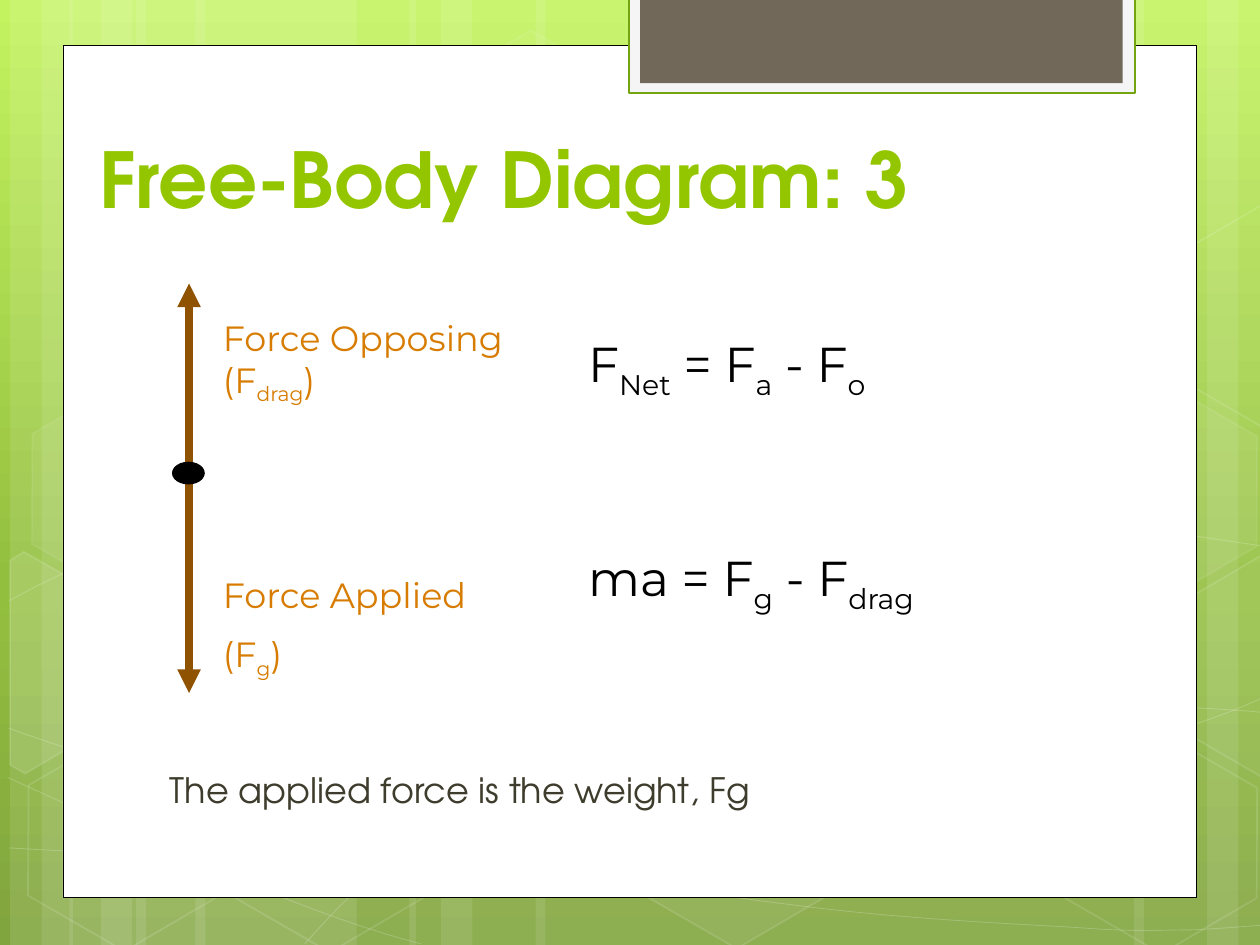
from lxml.etree import SubElement
from pptx import Presentation
from pptx.dml.color import RGBColor
from pptx.enum.shapes import MSO_CONNECTOR, MSO_SHAPE
from pptx.enum.text import MSO_ANCHOR, PP_ALIGN
from pptx.oxml.ns import qn
from pptx.util import Inches, Pt

# The grid has 10 columns and 7.5 rows of one inch each
COLUMNS, ROWS = 10, 7.5
COLORS = {
    "white": "FFFFFF", "black": "000000", "title": "94C600", "body": "3E3D2D",
    "arrow": "8F5201", "label": "D77C01", "frame": "F5F5F5", "tab": "71685A",
    "border": "74A510", "top": "C3F35F", "middle": "93BF3F", "bottom": "81A53E",
}
HEADING_FONT, LABEL_FONT = "TeX Gyre Adventor", "Montserrat"

# Background stripes: left column, width
STRIPES = [
    (1.08, 1.75), (0.08, 0.5), (0.33, 0.83), (1.55, 1.75), (0.55, 0.5), (0.8, 0.83),
    (7.33, 1.75), (9.58, 0.5), (9, 0.83), (4.25, 3.08), (3.25, 0.5), (3.5, 0.83),
]
# Background waves: a start point, then three points for each Bezier segment
WAVES = [
    [(0.07, 6.73), (0.61, 6.76), (1.15, 6.79), (1.9, 6.78), (2.65, 6.77), (3.58, 6.75),
     (4.58, 6.65), (5.58, 6.55), (7, 6.36), (7.92, 6.17), (8.83, 5.98), (9.77, 5.68),
     (10.07, 5.51)],
    [(0.07, 4.77), (0.36, 4.61), (0.65, 4.46), (1.21, 4.31), (1.78, 4.16), (2.59, 3.94),
     (3.47, 3.87), (4.36, 3.8), (5.44, 3.79), (6.54, 3.87), (7.64, 3.95), (9.47, 4.26),
     (10.07, 4.34)],
    [(0.06, 6.17), (1.27, 6.72), (2.47, 7.27), (3.34, 7.49)],
    [(0.07, 5.78), (0.38, 5.89), (0.7, 6), (1.28, 6.16), (1.86, 6.31), (2.73, 6.56),
     (3.57, 6.73), (4.4, 6.9), (5.45, 7.08), (6.28, 7.18), (7.11, 7.29), (8, 7.33),
     (8.53, 7.36), (9.05, 7.4), (9.19, 7.38), (9.45, 7.38), (9.71, 7.37), (9.89, 7.35),
     (10.07, 7.34)],
    [(2.42, 7.49), (2.6, 7.29), (2.78, 7.09), (3.02, 6.91), (3.26, 6.73), (3.6, 6.53),
     (3.88, 6.39), (4.16, 6.25), (4.33, 6.19), (4.7, 6.09), (5.06, 5.99), (5.73, 5.85),
     (6.08, 5.78), (6.44, 5.71), (6.49, 5.71), (6.8, 5.69), (7.11, 5.66), (7.6, 5.63),
     (7.94, 5.62), (8.29, 5.61), (8.86, 5.62), (8.86, 5.62), (9.08, 5.62), (9.31, 5.62),
     (9.53, 5.62), (9.71, 5.63), (9.88, 5.64), (9.97, 5.65), (10.06, 5.66), (10.03, 5.65),
     (10.06, 5.66)],
]
# Hexagons: left column, top row, fill opacity (0 for none), line opacity
HEXAGONS = [
    (3.34, 0.36, 4, 8), (4.97, 5.89, 6, 12), (0.11, 5.91, 0, 12), (0.14, 3.12, 7, 8),
    (1.74, 5.92, 0, 12), (7.53, 4.53, 10, 12), (8.34, 5.93, 0, 12), (8.34, 3.14, 7, 8),
]
# Hexagons cut off by the slide edge: corner points, fill opacity
CUT_HEXAGONS = [
    ([(0.08, 4.45), (0.19, 4.38), (0.96, 4.82), (0.95, 5.7), (0.2, 6.14), (0.08, 6.07)], 10),
    ([(9.26, 4.85), (10.01, 4.41), (10.09, 4.46), (10.09, 6.13), (10.02, 6.17),
      (9.26, 5.73)], 4),
    ([(9.26, 2.07), (10.01, 1.63), (10.1, 1.68), (10.09, 3.35), (10.02, 3.39),
      (9.26, 2.95)], 0),
]


def write_text(paragraph, pieces, *, size, font, color, bold=False, space_before=0):
    """Write pieces as runs; every second piece is a subscript."""
    paragraph.alignment = PP_ALIGN.LEFT
    paragraph.space_before = Pt(space_before)
    for index, piece in enumerate(pieces):
        run = paragraph.add_run()
        run.text = piece
        run.font.size, run.font.name, run.font.bold = Pt(size), font, bold
        run.font.color.rgb = RGBColor.from_string(COLORS[color])
        if index % 2:
            run.font._element.set("baseline", "-25000")


class SlideBuilder:
    def __init__(self, presentation):
        self.layout = presentation.slide_layouts[5]
        self.slide = presentation.slides.add_slide(self.layout)
        self.shapes = self.slide.shapes

    def background(self, stops):
        fill = self.slide.background.fill
        fill.gradient()
        fill.gradient_angle = 270
        stop_list = next(self.slide.element.iter(qn("a:gsLst")))
        stop_list.clear()
        for position, color in stops:
            stop = SubElement(stop_list, qn("a:gs"), pos=str(position * 1000))
            SubElement(stop, qn("a:srgbClr"), val=COLORS[color])

    def move_to_layout(self):
        """Make the decoration drawn so far part of the slide layout."""
        for placeholder in list(self.layout.placeholders)[1:]:
            self.layout.shapes._spTree.remove(placeholder.element)
        for shape in list(self.shapes):
            if not shape.is_placeholder:
                self.layout.shapes._spTree.append(shape.element)

    def paint(self, fill, color, opacity=100):
        if not color or not opacity:
            fill.background()
            return
        fill.solid()
        fill.fore_color.rgb = RGBColor.from_string(COLORS[color])
        if opacity < 100:
            color_element = fill._xPr.find(qn("a:solidFill"))[0]
            SubElement(color_element, qn("a:alpha"), val=str(opacity * 1000))

    def style(self, shape, fill, fill_opacity, line, width, line_opacity):
        shape.shadow.inherit = False
        self.paint(shape.fill, fill, fill_opacity)
        self.paint(shape.line.fill, line, line_opacity)
        if line:
            shape.line.width = Pt(width)

    def shape(self, kind, box, fill, fill_opacity=100, line=None, width=1, line_opacity=100):
        shape = self.shapes.add_shape(kind, *map(Inches, box))
        self.style(shape, fill, fill_opacity, line, width, line_opacity)
        return shape

    def outline(self, points, closed, fill_opacity, width, line_opacity):
        start, *others = [(Inches(x), Inches(y)) for x, y in points]
        builder = self.shapes.build_freeform(*start)
        builder.add_line_segments(others, close=closed)
        shape = builder.convert_to_shape()
        self.style(shape, "white", fill_opacity, "white", width, line_opacity)
        return shape

    def curve(self, controls, width, line_opacity):
        """Draw an outline and join every three of its points into a Bezier segment."""
        shape = self.outline(controls, False, 0, width, line_opacity)
        segments = list(shape.element.iter(qn("a:lnTo")))
        parent = segments[0].getparent()
        for first in range(0, len(segments), 3):
            bezier = SubElement(parent, qn("a:cubicBezTo"))
            for segment in segments[first:first + 3]:
                bezier.append(segment[0])
                parent.remove(segment)

    def arrow(self, column, start_row, end_row):
        arrow = self.shapes.add_connector(
            MSO_CONNECTOR.STRAIGHT, *map(Inches, (column, start_row, column, end_row)))
        self.paint(arrow.line.fill, "arrow")
        arrow.line.width = Pt(4.5)
        SubElement(arrow.line._get_or_add_ln(), qn("a:tailEnd"), type="triangle")
        SubElement(arrow.element.spPr, qn("a:effectLst"))

    def text(self, box, *paragraphs, size=20, font=LABEL_FONT, color="label"):
        frame = self.shapes.add_textbox(*map(Inches, box)).text_frame
        frame.word_wrap = True
        for index, pieces in enumerate(paragraphs):
            paragraph = frame.add_paragraph() if index else frame.paragraphs[0]
            write_text(paragraph, pieces, size=size, font=font, color=color,
                       space_before=size / 2 if index else 0)

    def title(self, box, text):
        title = self.shapes.title
        title.left, title.top, title.width, title.height = map(Inches, box)
        title.text_frame.vertical_anchor = MSO_ANCHOR.BOTTOM
        paragraph = title.text_frame.paragraphs[0]
        write_text(paragraph, [text], size=44, font=HEADING_FONT, color="title", bold=True)
        paragraph._p.get_or_add_pPr().set("marL", str(Inches(0.13)))
        # Keep the title as the front element
        self.shapes._spTree.append(title.element)


def main():
    presentation = Presentation()
    presentation.slide_width, presentation.slide_height = Inches(COLUMNS), Inches(ROWS)
    builder = SlideBuilder(presentation)

    # Green background with stripes, waves and hexagons
    builder.background([(0, "top"), (62, "middle"), (100, "bottom")])
    for left, width in STRIPES:
        builder.shape(MSO_SHAPE.RECTANGLE, (left, 0, width, ROWS), "white", 10)
    for controls in WAVES:
        builder.curve(controls, 0.5, 20)
    for left, top, fill_opacity, line_opacity in HEXAGONS:
        hexagon = builder.shape(MSO_SHAPE.HEXAGON, (left, top, 1.75, 1.52), "white",
                                fill_opacity, "white", 1, line_opacity)
        hexagon.rotation = 30
        hexagon.adjustments[0], hexagon.adjustments[1] = 0.285, 1.155
    for points, fill_opacity in CUT_HEXAGONS:
        builder.outline(points, True, fill_opacity, 1, 12)

    # White panel and the tab at its top
    builder.shape(MSO_SHAPE.RECTANGLE, (0.5, 0.36, 9, 6.76), "white", line="black", width=0.5)
    builder.shape(MSO_SHAPE.RECTANGLE, (4.99, -0.02, 4.02, 0.76), "frame",
                  line="border", width=1.25)
    builder.shape(MSO_SHAPE.RECTANGLE, (5.08, -0.02, 3.83, 0.68), "tab")
    builder.move_to_layout()

    # Force arrows, labels and equations
    builder.arrow(1.5, 3.67, 5.5)
    builder.arrow(1.5, 3.75, 2.25)
    builder.text((4.57, 2.6, 3.17, 0.57), ["F", "Net", " = F", "a", " - F", "o"],
                 size=28, color="black")
    builder.text((1.67, 2.46, 2.75, 0.77), ["Force Opposing (F", "drag", ")"])
    builder.text((4.57, 4.3, 4.67, 0.57), ["ma = F", "g", " - F", "drag"],
                 size=28, color="black")
    builder.text((1.67, 4.5, 2.75, 0.94), ["Force Applied"], ["(F", "g", ")"])
    builder.text((1.25, 6.05, 5.9, 0.44), ["The applied force is the weight, Fg"],
                 font=HEADING_FONT, color="body")
    builder.shape(MSO_SHAPE.OVAL, (1.37, 3.67, 0.25, 0.17), "black", line="black", width=0.75)

    builder.title((0.56, 0.75, 8.35, 1.08), "Free-Body Diagram: 3")
    presentation.save("out.pptx")


if __name__ == "__main__":
    main()
